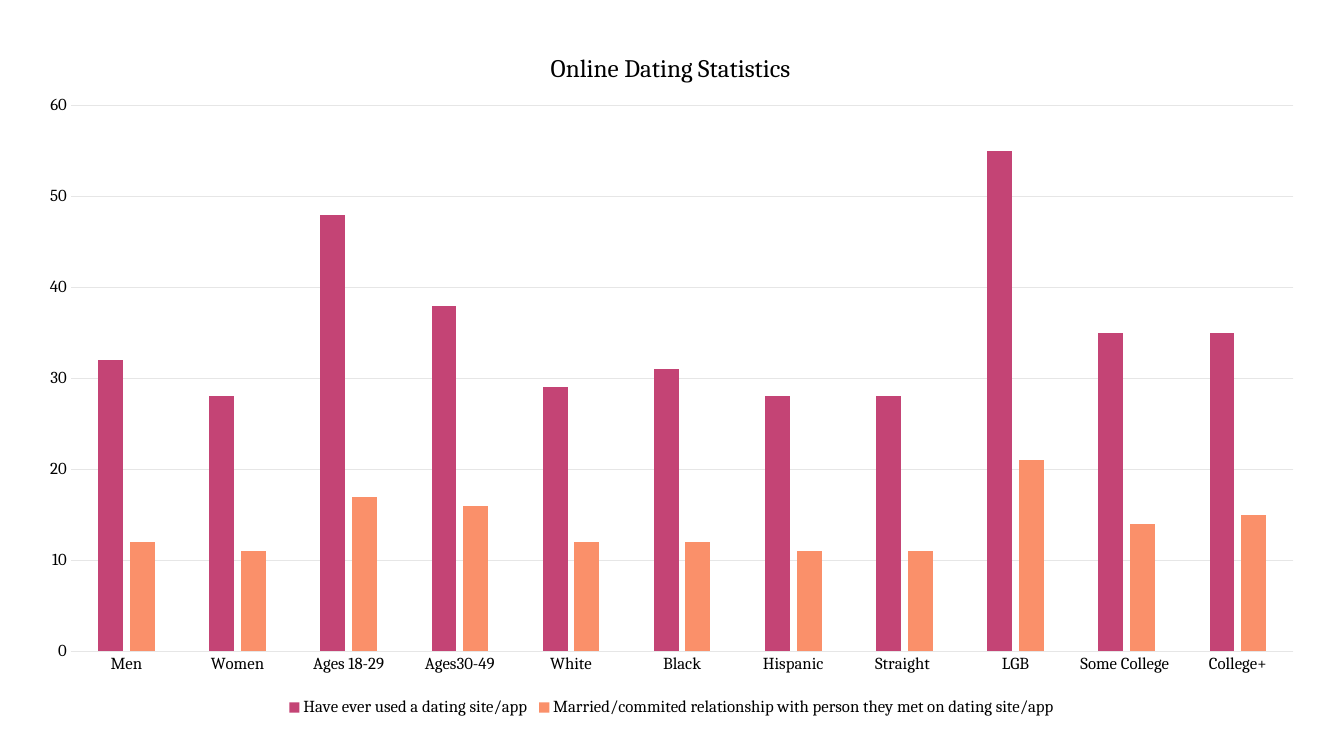
import lxml.etree
import pptx
import pptx.chart.data
import pptx.dml.color
import pptx.enum.chart
import pptx.oxml.ns
import pptx.util
from pptx.util import Cm

FONT = "Cambria"
GRID = "E6E6E6"
GROUPS = ["Men", "Women", "Ages 18-29", "Ages30-49", "White", "Black", "Hispanic",
          "Straight ", "LGB", "Some College ", "College+"]
SERIES = [
    ("Have ever used a dating site/app", "C44475",
     [32, 28, 48, 38, 29, 31, 28, 28, 55, 35, 35]),
    ("Married/commited relationship with person they met on dating site/app", "FA906A",
     [12, 11, 17, 16, 12, 12, 11, 11, 21, 14, 15]),
]


def colour(value):
    """Return the colour for a hex string."""
    return pptx.dml.color.RGBColor.from_string(value)


def set_values(target, values):
    """Set each named attribute of the target."""
    for name, value in values.items():
        setattr(target, name, value)


def format_font(font, size, hex_colour="000000"):
    """Give a font its face, size and colour."""
    set_values(font, {"name": FONT, "size": pptx.util.Pt(size), "bold": False})
    font.color.rgb = colour(hex_colour)


def format_line(line):
    """Give an axis or gridline its thin grey line."""
    line.color.rgb = colour(GRID)
    line.width = pptx.util.Pt(0.75)


def place(element, index, inner=False, **fractions):
    """Fix a chart part at fractions of the chart area."""
    qn = pptx.oxml.ns.qn
    for old in element.findall(qn("c:layout")):
        element.remove(old)
    layout = lxml.etree.Element(qn("c:layout"))
    manual = lxml.etree.SubElement(layout, qn("c:manualLayout"))
    settings = {"layoutTarget": "inner"} if inner else {}
    settings.update(xMode="edge", yMode="edge", **fractions)
    for name, value in settings.items():
        lxml.etree.SubElement(manual, qn(f"c:{name}")).set("val", str(value))
    element.insert(index, layout)


def format_axes(chart):
    """Style the group axis and the percentage axis."""
    marks = pptx.enum.chart.XL_TICK_MARK
    for axis in (chart.category_axis, chart.value_axis):
        set_values(axis, {"major_tick_mark": marks.NONE, "minor_tick_mark": marks.NONE})
        format_font(axis.tick_labels.font, 12)
    format_line(chart.category_axis.format.line)
    set_values(chart.value_axis, {"minimum_scale": 0, "maximum_scale": 60,
                                  "major_unit": 10, "has_major_gridlines": True})
    chart.value_axis.format.line.fill.background()
    format_line(chart.value_axis.major_gridlines.format.line)


def format_title(chart, wording):
    """Write the chart title."""
    chart.has_title = True
    paragraph = chart.chart_title.text_frame.paragraphs[0]
    run = paragraph.add_run()
    run.text = wording
    format_font(run.font, 18)
    chart.chart_title.include_in_layout = False


def format_legend(chart):
    """Show the legend below the columns."""
    chart.has_legend = True
    set_values(chart.legend, {"position": pptx.enum.chart.XL_LEGEND_POSITION.BOTTOM,
                              "include_in_layout": False})
    format_font(chart.legend.font, 12)


def add_dating_chart(slide):
    """Add the clustered columns for all groups."""
    statistics = pptx.chart.data.CategoryChartData()
    statistics.categories = GROUPS
    for name, _, values in SERIES:
        statistics.add_series(name, values)
    chart = slide.shapes.add_chart(
        pptx.enum.chart.XL_CHART_TYPE.COLUMN_CLUSTERED,
        Cm(0.61), Cm(0.56), Cm(32.64), Cm(17.65), statistics).chart
    format_font(chart.font, 10, "595959")
    columns = chart.plots[0]
    set_values(columns, {"gap_width": 219, "overlap": -27, "vary_by_categories": False})
    for series, (_, fill, _) in zip(columns.series, SERIES):
        series.format.fill.solid()
        series.format.fill.fore_color.rgb = colour(fill)
        series.invert_if_negative = False
    format_axes(chart)
    format_title(chart, "Online Dating Statistics")
    format_legend(chart)
    body = chart.element.find(pptx.oxml.ns.qn("c:chart"))
    for tag, index, inner, fractions in (
            ("c:title", 1, False, {"x": 0.403, "y": 0.035}),
            ("c:plotArea", 0, True, {"x": 0.036, "y": 0.119, "w": 0.944, "h": 0.779}),
            ("c:legend", 1, False, {"x": 0.2, "y": 0.962, "w": 0.6, "h": 0.037})):
        place(body.find(pptx.oxml.ns.qn(tag)), index, inner, **fractions)


def main():
    """Build the slide and save it."""
    deck = pptx.Presentation()
    set_values(deck, {"slide_width": Cm(33.87), "slide_height": Cm(19.05)})
    slide = deck.slides.add_slide(deck.slide_layouts[6])
    add_dating_chart(slide)
    deck.save("out.pptx")


if __name__ == "__main__":
    main()
